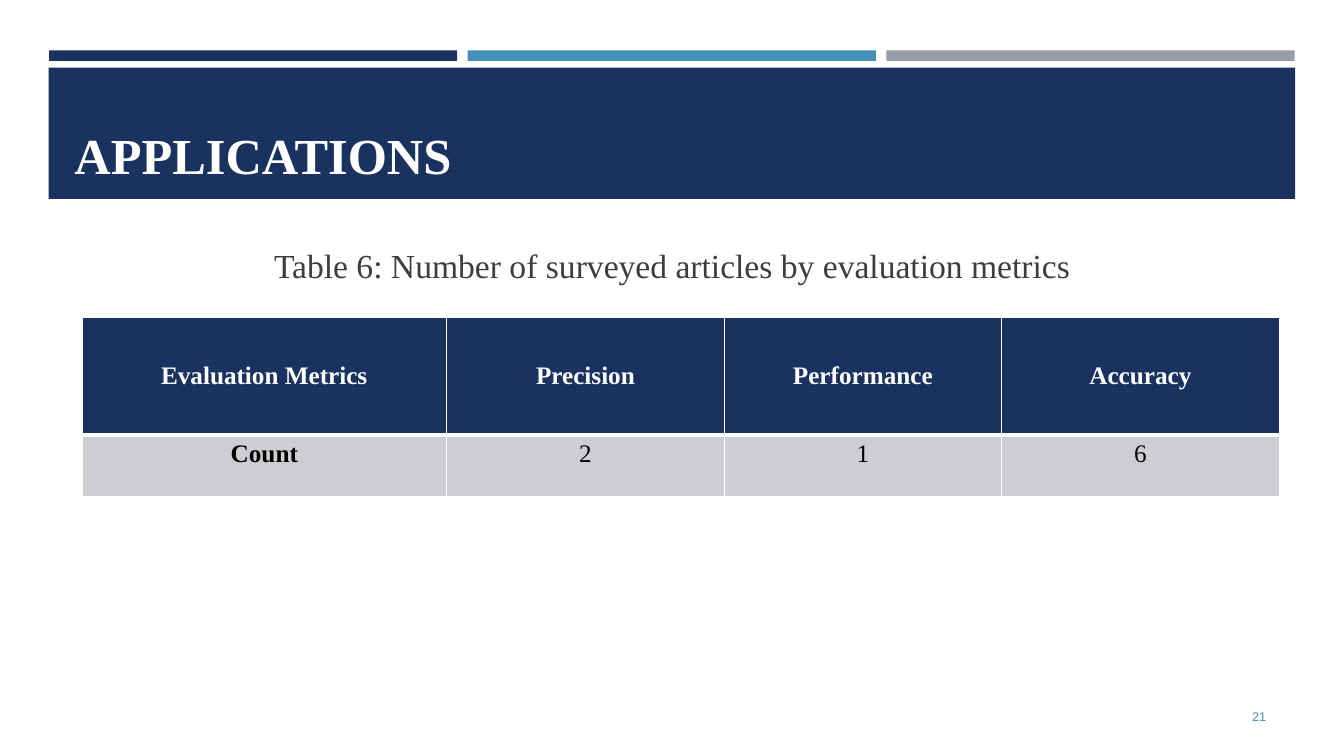
from lxml import etree
from pptx import Presentation
from pptx.dml.color import RGBColor
from pptx.enum.shapes import MSO_SHAPE
from pptx.enum.text import MSO_ANCHOR, PP_ALIGN
from pptx.oxml.ns import qn
from pptx.util import Pt

NAVY = RGBColor(0x1A, 0x32, 0x60)
BLUE = RGBColor(0x45, 0x90, 0xB8)
GRAY = RGBColor(0x96, 0x9F, 0xA7)
PALE = RGBColor(0xCD, 0xCE, 0xD2)
DARK = RGBColor(0x3D, 0x3D, 0x3D)
BLACK = RGBColor(0, 0, 0)
WHITE = RGBColor(0xFF, 0xFF, 0xFF)
SERIF = "Times New Roman"

TITLE = "APPLICATIONS"
CAPTION = "Table 6: Number of surveyed articles by evaluation metrics"
PAGE = "21"
ROWS = [
    ("Evaluation Metrics", "Precision", "Performance", "Accuracy"),
    ("Count", "2", "1", "6"),
]
COL_WIDTHS = [260.6, 198.2, 198.2, 198.2]
ROW_HEIGHTS = [83.5, 44]
STRIPES = [NAVY, BLUE, GRAY]
STRIPE_LEFT, STRIPE_WIDTH, STRIPE_STEP = 35, 291.6, 299.1


def write(tf, text, size, color, font=SERIF, bold=False,
          align=PP_ALIGN.LEFT, anchor=MSO_ANCHOR.TOP, before=0):
    tf.word_wrap = True
    tf.vertical_anchor = anchor
    p = tf.paragraphs[0]
    p.alignment = align
    p.space_before = Pt(before)
    r = p.add_run()
    r.text = text
    r.font.size, r.font.name, r.font.bold = Pt(size), font, bold
    r.font.color.rgb = color


def add_bar(s, left, top, width, height, color):
    sp = s.shapes.add_shape(MSO_SHAPE.RECTANGLE, Pt(left), Pt(top), Pt(width), Pt(height))
    sp.shadow.inherit = False
    sp.fill.solid()
    sp.fill.fore_color.rgb = color
    sp.line.fill.background()


def set_borders(cell, **widths):
    """Draw white borders; they must precede the cell fill in the XML."""
    props = cell._tc.get_or_add_tcPr()
    for i, side in enumerate(("lnL", "lnR", "lnT", "lnB")):
        ln = etree.Element(qn(f"a:{side}"), w=str(Pt(widths.get(side, 1))))
        fill = etree.SubElement(ln, qn("a:solidFill"))
        etree.SubElement(fill, qn("a:srgbClr"), val=str(WHITE))
        props.insert(i, ln)


def add_metrics_table(s):
    table = s.shapes.add_table(len(ROWS), len(COL_WIDTHS), Pt(58.5), Pt(227),
                               Pt(sum(COL_WIDTHS)), Pt(sum(ROW_HEIGHTS))).table
    for col, width in zip(table.columns, COL_WIDTHS):
        col.width = Pt(width)
    for i, texts in enumerate(ROWS):
        header = i == 0
        table.rows[i].height = Pt(ROW_HEIGHTS[i])
        for j, text in enumerate(texts):
            cell = table.cell(i, j)
            cell.fill.solid()
            cell.fill.fore_color.rgb = NAVY if header else PALE
            set_borders(cell, **{"lnB" if header else "lnT": 3})
            write(cell.text_frame, text, 18, WHITE if header else BLACK,
                  bold=header or j == 0, align=PP_ALIGN.CENTER)
            if header:
                cell.vertical_anchor = MSO_ANCHOR.MIDDLE
                cell.margin_left = cell.margin_right = Pt(5)
                cell.margin_top = cell.margin_bottom = 0


def main():
    prs = Presentation()
    prs.slide_width, prs.slide_height = Pt(960), Pt(540)
    s = prs.slides.add_slide(prs.slide_layouts[5])

    for i, color in enumerate(STRIPES):
        add_bar(s, STRIPE_LEFT + i * STRIPE_STEP, 36, STRIPE_WIDTH, 7.5, color)
    add_bar(s, 34.8, 48.4, 890.4, 93.7, NAVY)

    title = s.shapes.title
    title.left, title.top, title.width, title.height = Pt(46), Pt(55.5), Pt(868.3), Pt(80)
    write(title.text_frame, TITLE, 36, WHITE, bold=True, anchor=MSO_ANCHOR.BOTTOM)
    title.element.getparent().append(title.element)  # bring in front of the band

    caption = s.shapes.add_textbox(Pt(46), Pt(171.4), Pt(868.3), Pt(322.5))
    write(caption.text_frame, CAPTION, 24, DARK, align=PP_ALIGN.CENTER, before=4.8)
    add_metrics_table(s)
    number = s.shapes.add_textbox(Pt(828.7), Pt(497.5), Pt(82.8), Pt(28.8))
    write(number.text_frame, PAGE, 9, BLUE, font="Arial",
          align=PP_ALIGN.RIGHT, anchor=MSO_ANCHOR.MIDDLE)
    prs.save("out.pptx")


if __name__ == "__main__":
    main()
